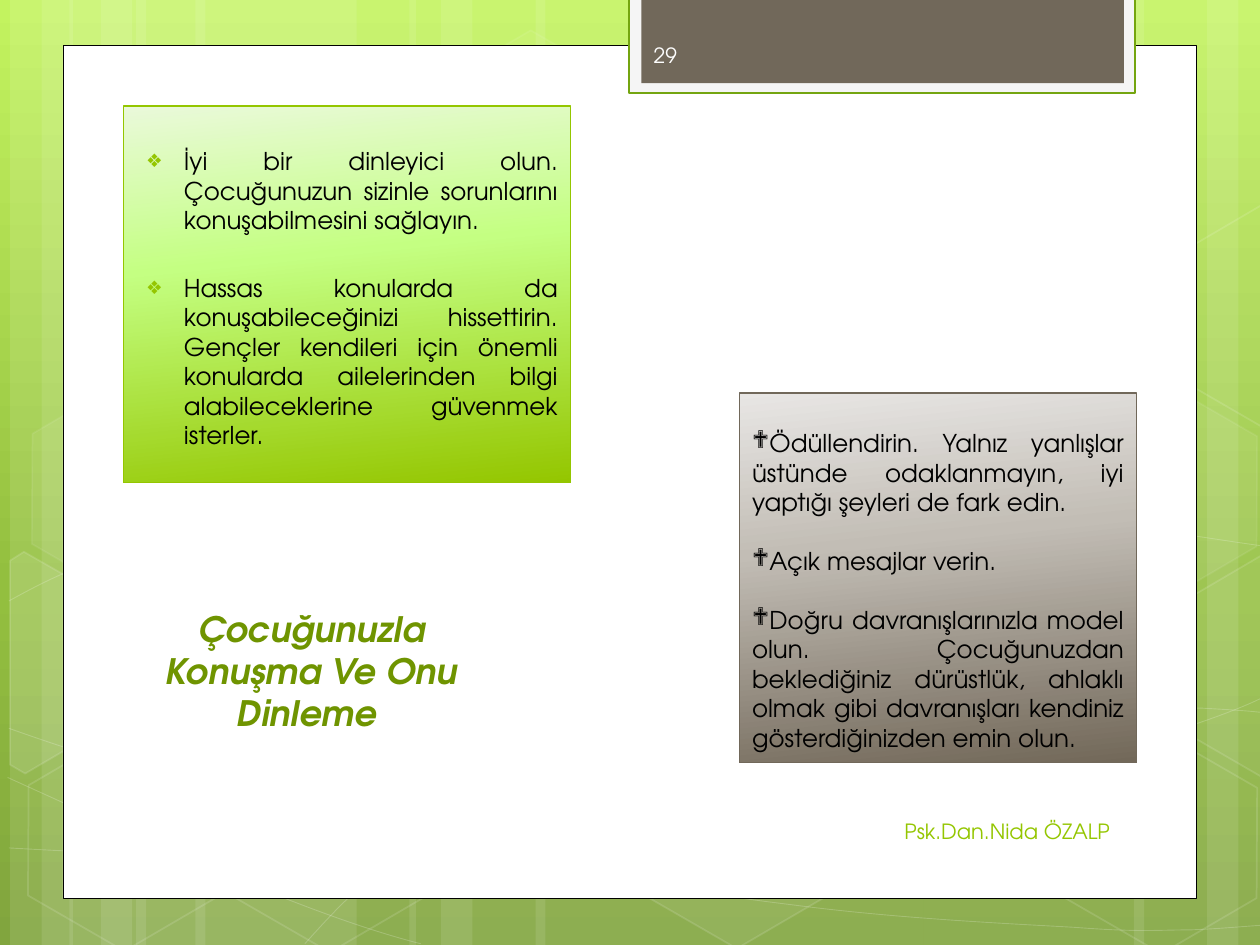
import pptx
import pptx.util
import pptx.dml.color
import pptx.enum.shapes
import pptx.enum.text
import pptx.oxml
import pptx.oxml.ns
from pptx.util import Inches

FONT = "TeX Gyre Adventor"
WHITE, LIME, BROWN = "FFFFFF", "94C600", "71685A"
SHAPE = pptx.enum.shapes.MSO_SHAPE
ALIGN = pptx.enum.text.PP_ALIGN
ANCHOR = pptx.enum.text.MSO_ANCHOR

STRIPES = [(1.08, 1.75), (0.08, 0.5), (0.33, 0.83), (1.55, 1.75), (0.55, 0.5), (0.8, 0.83),
           (7.33, 1.75), (9.58, 0.5), (9, 0.83), (4.25, 3.08), (3.25, 0.5), (3.5, 0.83)]
# Each curve is a start point followed by triples of Bezier points
CURVES = [
    [(0.07, 6.73), (0.61, 6.76), (1.15, 6.79), (1.9, 6.78), (2.65, 6.77), (3.58, 6.75), (4.58, 6.65),
     (5.58, 6.55), (7, 6.36), (7.92, 6.17), (8.83, 5.98), (9.77, 5.68), (10.07, 5.51)],
    [(0.07, 4.77), (0.36, 4.61), (0.65, 4.46), (1.21, 4.31), (1.78, 4.16), (2.59, 3.94), (3.47, 3.87),
     (4.36, 3.8), (5.44, 3.79), (6.54, 3.87), (7.64, 3.95), (9.47, 4.26), (10.07, 4.34)],
    [(0.06, 6.17), (1.27, 6.72), (2.47, 7.27), (3.34, 7.49)],
    [(0.07, 5.78), (0.38, 5.89), (0.7, 6), (1.28, 6.16), (1.86, 6.31), (2.73, 6.56), (3.57, 6.73),
     (4.4, 6.9), (5.45, 7.08), (6.28, 7.18), (7.11, 7.29), (8, 7.33), (8.53, 7.36),
     (9.05, 7.4), (9.19, 7.38), (9.45, 7.38), (9.71, 7.37), (9.89, 7.35), (10.07, 7.34)],
    [(2.42, 7.49), (2.6, 7.29), (2.78, 7.09), (3.02, 6.91), (3.26, 6.73), (3.6, 6.53), (3.88, 6.39),
     (4.16, 6.25), (4.33, 6.19), (4.7, 6.09), (5.06, 5.99), (5.73, 5.85), (6.08, 5.78),
     (6.44, 5.71), (6.49, 5.71), (6.8, 5.69), (7.11, 5.66), (7.6, 5.63), (7.94, 5.62),
     (8.29, 5.61), (8.86, 5.62), (8.86, 5.62), (9.1, 5.62), (9.3, 5.62), (9.53, 5.62),
     (9.71, 5.63), (9.88, 5.64), (9.97, 5.65), (10.06, 5.66), (10.03, 5.65), (10.06, 5.66)],
]
# left, top, fill opacity, line opacity
HEXAGONS = [(3.34, 0.36, 4, 8), (4.97, 5.89, 6, 12), (0.11, 5.91, 0, 12), (0.14, 3.12, 7, 8),
            (1.74, 5.92, 0, 12), (8.34, 5.93, 0, 12), (8.34, 3.14, 7, 8)]
# Hexagons cut by the page edge: points, fill opacity
CUT_HEXAGONS = [
    ([(0.08, 4.45), (0.19, 4.38), (0.96, 4.82), (0.95, 5.7), (0.2, 6.14), (0.08, 6.07)], 10),
    ([(9.26, 4.85), (10.01, 4.41), (10.09, 4.46), (10.09, 6.13), (10.02, 6.17), (9.26, 5.73)], 4),
    ([(9.26, 2.07), (10.01, 1.63), (10.1, 1.68), (10.09, 3.35), (10.02, 3.39), (9.26, 2.95)], 0),
]
LISTENING = [
    "İyi bir dinleyici olun. Çocuğunuzun sizinle sorunlarını konuşabilmesini sağlayın. ",
    "Hassas konularda da konuşabileceğinizi hissettirin. Gençler kendileri için önemli konularda "
    "ailelerinden bilgi alabileceklerine güvenmek isterler. ",
]
REWARDING = [
    "Ödüllendirin. Yalnız yanlışlar üstünde odaklanmayın, iyi yaptığı şeyleri de fark edin. ",
    "Açık mesajlar verin. ",
    "Doğru davranışlarınızla model olun. Çocuğunuzdan beklediğiniz dürüstlük, ahlaklı olmak gibi "
    "davranışları kendiniz gösterdiğinizden emin olun.",
]


def color(value):
    return pptx.dml.color.RGBColor.from_string(value)


def make(tag, parent, **attributes):
    child = parent.makeelement(pptx.oxml.ns.qn("a:" + tag), attributes)
    parent.append(child)
    return child


def paint(fill, value, opacity=100):
    if not opacity:
        fill.background()
        return
    fill.solid()
    fill.fore_color.rgb = color(value)
    if opacity < 100:
        tone = fill._xPr.find(".//" + pptx.oxml.ns.qn("a:srgbClr"))
        make("alpha", tone, val=str(opacity * 1000))


def paint_gradient(fill, stops, angle):
    fill.gradient()
    gradient = fill._xPr.find(pptx.oxml.ns.qn("a:gradFill"))
    gradient.clear()
    stop_list = make("gsLst", gradient)
    for position, value in stops:
        make("srgbClr", make("gs", stop_list, pos=str(position * 1000)), val=value)
    make("lin", gradient, ang=str(angle * 60000), scaled="0")


def outline(shape, value, width, opacity=100):
    paint(shape.line.fill, value, opacity)
    shape.line.width = pptx.util.Pt(width)


def add_plain(page, kind, box, fill, opacity=100):
    shape = page.shapes.add_shape(kind, *map(Inches, box))
    shape.shadow.inherit = False
    paint(shape.fill, fill, opacity)
    shape.line.fill.background()
    return shape


def add_outline(page, points, closed):
    corners = [(Inches(x), Inches(y)) for x, y in points]
    builder = page.shapes.build_freeform(*corners[0], scale=1.0)
    builder.add_line_segments(corners[1:], close=closed)
    shape = builder.convert_to_shape()
    shape.shadow.inherit = False
    return shape


def add_curve(page, knots):
    shape = add_outline(page, knots, closed=False)
    segments = list(shape._element.iter(pptx.oxml.ns.qn("a:lnTo")))
    route = segments[0].getparent()
    # Join every three straight segments into one Bezier segment
    for first in range(0, len(segments), 3):
        bend = make("cubicBezTo", route)
        for segment in segments[first:first + 3]:
            bend.append(segment[0])
            route.remove(segment)
    return shape


def write(shape, lines, size, value, align, gap=0, top=0.05, anchor=ANCHOR.TOP, bold=False, italic=False):
    frame = shape.text_frame
    frame.text = "\n".join(lines)
    frame.word_wrap = True
    frame.auto_size = pptx.enum.text.MSO_AUTO_SIZE.NONE
    frame.vertical_anchor = anchor
    frame.margin_left = frame.margin_right = Inches(0.1)
    frame.margin_top, frame.margin_bottom = Inches(top), Inches(0.05)
    for index, para in enumerate(frame.paragraphs):
        para.alignment = align
        para.space_before = pptx.util.Pt(gap if index else 0)
        for span in para.runs:
            span.font.name, span.font.size = FONT, pptx.util.Pt(size)
            span.font.bold, span.font.italic = bold, italic
            span.font.color.rgb = color(value)


def add_bullets(shape, hanging):
    for para in shape.text_frame.paragraphs:
        properties = para._p.get_or_add_pPr()
        properties.set("marL", str(Inches(0.38 if hanging else 0)))
        properties.set("indent", str(Inches(-0.3 if hanging else 0)))
        if hanging:
            make("srgbClr", make("buClr", properties), val=LIME)
        make("buSzPct", properties, val="76000" if hanging else "100000")
        make("buFont", properties, typeface="Arial" if hanging else "Wingdings")
        make("buChar", properties, char="❖")


def place(shape, box):
    shape.left, shape.top, shape.width, shape.height = map(Inches, box)
    shape._element.getparent().append(shape._element)  # bring to front


def draw_backdrop(page, width, height):
    paint_gradient(page.background.fill, [(0, "C3F35F"), (62, "93BF3F"), (100, "81A53E")], 90)
    for left, stripe_width in STRIPES:
        add_plain(page, SHAPE.RECTANGLE, (left, 0, stripe_width, height), WHITE, 10)
    for knots in CURVES:
        curve = add_curve(page, knots)
        curve.fill.background()
        outline(curve, WHITE, 0.5, 20)
    for left, top, fill_opacity, line_opacity in HEXAGONS:
        hexagon = add_plain(page, SHAPE.HEXAGON, (left, top, 1.75, 1.52), WHITE, fill_opacity)
        hexagon.adjustments[0] = 0.285
        hexagon.rotation = 30
        outline(hexagon, WHITE, 1, line_opacity)
    for points, opacity in CUT_HEXAGONS:
        piece = add_outline(page, points, closed=True)
        paint(piece.fill, WHITE, opacity)
        outline(piece, WHITE, 1, 12)
    # White sheet
    sheet = add_plain(page, SHAPE.RECTANGLE, (0.5, 0.36, width - 1, 6.77), WHITE)
    outline(sheet, "000000", 0.5)


def draw_number_tab(page, left, top, width, height):
    tab = add_plain(page, SHAPE.RECTANGLE, (left, top, width, height), "F5F5F5")
    outline(tab, "74A510", 1.25)
    add_plain(page, SHAPE.RECTANGLE, (left + 0.1, top, width - 0.19, height - 0.08), BROWN)
    number = page.shapes.add_textbox(*map(Inches, (left + 0.1, top + 0.26, 1.46, 0.4)))
    write(number, ["29"], 12, "FEFEFE", ALIGN.LEFT, anchor=ANCHOR.MIDDLE)


def draw_panel(shape, lines, stops, edge, gap, top, hanging):
    paint_gradient(shape.fill, stops, 84)
    outline(shape, edge, 0.75)
    write(shape, lines, 14, "000000", ALIGN.JUSTIFY, gap, top)
    add_bullets(shape, hanging)


def main():
    deck = pptx.Presentation()
    deck.slide_width, deck.slide_height = Inches(10), Inches(7.5)
    page = deck.slides.add_slide(deck.slide_layouts[1])
    title, body = page.shapes.title, page.placeholders[1]

    draw_backdrop(page, 10, 7.5)
    draw_number_tab(page, 4.99, -0.02, 4.02, 0.76)

    # Listening and rewarding panels
    place(body, (0.98, 0.84, 3.55, 2.99))
    draw_panel(body, LISTENING, [(0, "EAF9DA"), (40, "C4FF82"), (100, LIME)], LIME, 22, 0.32, True)
    rewards = add_plain(page, SHAPE.RECTANGLE, (5.87, 3.12, 3.15, 2.93), BROWN)
    draw_panel(rewards, REWARDING, [(0, "E8E6E4"), (40, "C2BDB5"), (100, "726859")], BROWN, 16.8, 0.28, False)

    # Title and footer
    place(title, (0.9, 4.77, 3.15, 1.11))
    write(title, ["Çocuğunuzla Konuşma Ve Onu Dinleme "], 20, "6F9400", ALIGN.CENTER, bold=True, italic=True)
    footer = page.shapes.add_textbox(*map(Inches, (5.08, 6.4, 3.83, 0.4)))
    write(footer, ["Psk.Dan.Nida ÖZALP"], 12, LIME, ALIGN.RIGHT, anchor=ANCHOR.MIDDLE)

    deck.save("out.pptx")


if __name__ == "__main__":
    main()
